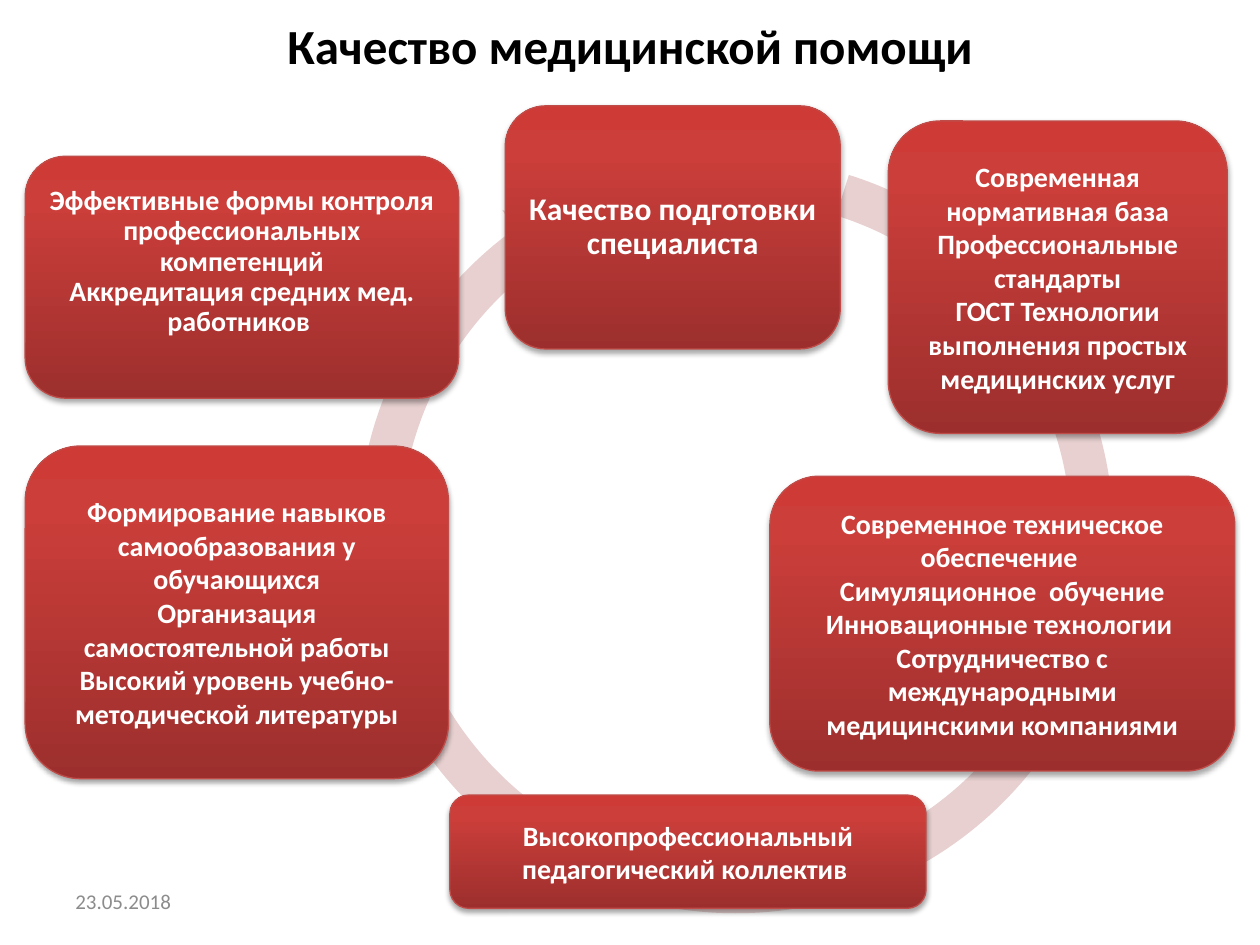
from copy import deepcopy

from lxml import etree
from pptx import Presentation
from pptx.dml.color import RGBColor
from pptx.enum.shapes import MSO_SHAPE
from pptx.enum.text import MSO_ANCHOR, PP_ALIGN
from pptx.oxml.ns import qn
from pptx.util import Inches, Pt

# Content
TITLE = "Качество медицинской помощи"
DATE = "23.05.2018"
FONT = "Calibri"
COLORS = {
    "title": "000000", "date": "8C8C8C", "text": "FFFFFF",
    "ring": "E8D0D0", "outline": "BF4C48", "shadow": "000000",
    "dark": "9C2F2D", "middle": "CB3E3A", "light": "CE3B37",
}
GRADIENT = [(0, "dark"), (0.8, "middle"), (1, "light")]
RING_BOX = (2.66, 1.07, 6.36, 6.36)
RING_ADJUSTMENTS = (0.053, 3.126, 140.274, 172.455, 0.055)
INSET = 0.07

# Factors of quality: place, paragraphs, text format
FACTORS = [
    ((7.05, 0.96, 2.69, 2.48),
     ["Современная нормативная база",
      "Профессиональные стандарты",
      "ГОСТ Технологии выполнения простых медицинских услуг"], {}),
    ((3.57, 6.31, 3.78, 0.9),
     ["Высокопрофессиональный педагогический коллектив "], {}),
    ((0.2, 3.54, 3.36, 2.64),
     ["Формирование навыков самообразования у обучающихся",
      "Организация самостоятельной работы",
      "Высокий уровень учебно-методической литературы"], {}),
    ((6.11, 3.78, 3.69, 2.34),
     ["Современное техническое обеспечение ",
      "Симуляционное  обучение Инновационные технологии ",
      "Сотрудничество с международными медицинскими компаниями"], {}),
    ((0.2, 1.24, 3.44, 1.92),
     ["Эффективные формы контроля профессиональных компетенций",
      "Аккредитация средних мед. работников "],
     {"spacing": 0.9, "bottom": 0.31}),
    ((4.01, 0.84, 2.66, 1.93),
     ["Качество подготовки специалиста"], {"size": 18, "spacing": 0.9}),
]


def rgb(name):
    return RGBColor.from_string(COLORS[name])


def inches(box):
    return [Inches(value) for value in box]


def write(frame, paragraphs, size=16, color="text", bold=True,
          align=PP_ALIGN.CENTER, spacing=None, inset=INSET, bottom=None):
    frame.word_wrap = True
    frame.vertical_anchor = MSO_ANCHOR.MIDDLE
    frame.margin_left = frame.margin_right = Inches(inset)
    frame.margin_top = Inches(INSET)
    frame.margin_bottom = Inches(bottom or INSET)
    for index, text in enumerate(paragraphs):
        paragraph = frame.paragraphs[0] if index == 0 else frame.add_paragraph()
        paragraph.alignment = align
        paragraph.line_spacing = spacing
        run = paragraph.add_run()
        run.text = text
        run.font.name = FONT
        run.font.size = Pt(size)
        run.font.bold = bold
        run.font.color.rgb = rgb(color)


def paint_gradient(fill):
    fill.gradient()
    fill.gradient_angle = 90
    stop_list = fill._xPr.find(qn("a:gradFill")).find(qn("a:gsLst"))
    stop_list.append(deepcopy(stop_list[0]))
    for stop, (position, color) in zip(fill.gradient_stops, GRADIENT):
        stop.position = position
        stop.color.rgb = rgb(color)


def add_shadow(shape):
    shape.shadow.inherit = False
    effects = shape._element.spPr.find(qn("a:effectLst"))
    shadow = etree.SubElement(
        effects, qn("a:outerShdw"), blurRad=str(Pt(3.1)), dist=str(Pt(1.8)),
        dir=str(90 * 60000), rotWithShape="0")
    color = etree.SubElement(shadow, qn("a:srgbClr"), val=COLORS["shadow"])
    etree.SubElement(color, qn("a:alpha"), val="35000")


def main():
    deck = Presentation()
    deck.slide_width, deck.slide_height = Inches(10), Inches(7.5)
    slide = deck.slides.add_slide(deck.slide_layouts[5])
    shapes = slide.shapes

    # Title and date
    heading = shapes.title
    heading.left, heading.top, heading.width, heading.height = inches((0.5, 0.09, 9, 0.54))
    write(heading.text_frame, [TITLE], size=28, color="title")
    date = shapes.add_textbox(*inches((0.5, 6.95, 2.33, 0.4)))
    write(date.text_frame, [DATE], size=12, color="date", bold=False,
          align=PP_ALIGN.LEFT, inset=0.1)

    # Ring behind the factors
    ring = shapes.add_shape(MSO_SHAPE.CIRCULAR_ARROW, *inches(RING_BOX))
    for index, value in enumerate(RING_ADJUSTMENTS):
        ring.adjustments[index] = value
    ring.fill.solid()
    ring.fill.fore_color.rgb = rgb("ring")
    ring.line.fill.background()
    ring.shadow.inherit = False

    # Factors
    for box, paragraphs, text_format in FACTORS:
        factor = shapes.add_shape(MSO_SHAPE.ROUNDED_RECTANGLE, *inches(box))
        paint_gradient(factor.fill)
        factor.line.color.rgb = rgb("outline")
        factor.line.width = Pt(0.75)
        add_shadow(factor)
        write(factor.text_frame, paragraphs, **text_format)

    deck.save("out.pptx")


if __name__ == "__main__":
    main()
